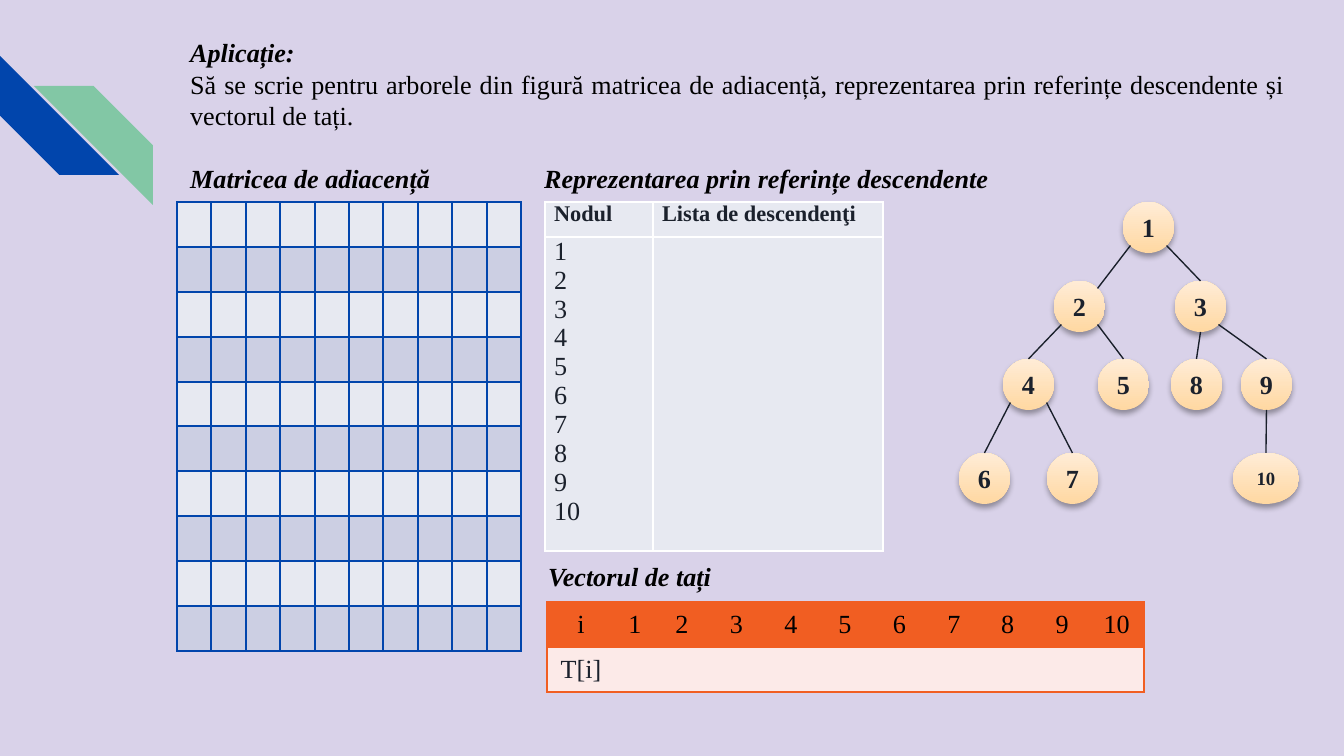
from dataclasses import dataclass
from math import sqrt

from lxml import etree
from pptx import Presentation
from pptx import util as u
from pptx.dml.color import RGBColor
from pptx.enum import shapes, text
from pptx.oxml.ns import qn

SCALE = 914400 / 134.4
FONT = "Times New Roman"
HEX = {
    "back": "D9D2E9", "blue": "0145AC", "green": "82C7A5", "black": "000000",
    "ink": "1B212C", "edge": "1A202B", "sand": "FFD8A2", "cream": "FFECD6",
    "pale": "E7E9F1", "band": "CCCFE3", "white": "FFFFFF",
    "orange": "F15E22", "rose": "FCEAE8",
}
ALIGN = text.PP_ALIGN
ANCHOR = text.MSO_ANCHOR


@dataclass
class Node:
    name: str
    x: int
    y: int
    w: int = 51
    size: int = 14
    h: int = 51


@dataclass
class Edge:
    top: str
    low: str
    start: str
    end: str = "n"


@dataclass
class Cell:
    fill: str
    lines: tuple[str, ...] = ()
    color: str = "ink"
    size: int = 14
    bold: bool = False


@dataclass
class Grid:
    x: int
    y: int
    cols: list[int]
    rows: list[int]
    cells: list[list[Cell]]
    line: str
    pad: int
    align: ALIGN = ALIGN.JUSTIFY
    anchor: ANCHOR = ANCHOR.TOP
    inner: bool = True


NODES = [
    Node("1", 1123, 202), Node("2", 1054, 281), Node("4", 1003, 359),
    Node("5", 1098, 359), Node("3", 1175, 281), Node("6", 959, 453),
    Node("7", 1047, 453), Node("8", 1171, 359), Node("9", 1241, 359),
    Node("10", 1233, 453, 66, 10),
]
EDGES = [
    Edge("1", "2", "sw", "ne"), Edge("1", "3", "se"), Edge("2", "4", "sw"),
    Edge("4", "6", "sw"), Edge("2", "5", "se"), Edge("4", "7", "se"),
    Edge("3", "8", "s"), Edge("3", "9", "se"), Edge("9", "10", "s"),
]
DIAG = sqrt(0.5)
SITES = {"n": (0, -1), "s": (0, 1), "ne": (DIAG, -DIAG),
         "sw": (-DIAG, DIAG), "se": (DIAG, DIAG)}


def px(n: float) -> u.Emu:
    return u.Emu(round(n * SCALE))


def rgb(name: str) -> RGBColor:
    return RGBColor.from_string(HEX[name])


def split(total: int, count: int) -> list[int]:
    """Cut a length into near-equal whole parts."""
    cuts = [round(total * i / count) for i in range(count + 1)]
    return [b - a for a, b in zip(cuts, cuts[1:])]


def add_run(para, words: str, size: int = 14, color: str = "black",
            bold: bool = False, slant: bool = False) -> None:
    run = para.add_run()
    run.text = words
    font = run.font
    font.name, font.size, font.bold, font.italic = FONT, u.Pt(size), bold, slant
    font.color.rgb = rgb(color)


def add_box(slide, x: int, y: int, w: int, h: int):
    frame = slide.shapes.add_textbox(px(x), px(y), px(w), px(h)).text_frame
    frame.word_wrap = True
    return frame


def add_stripe(slide, x: int, y: int, color: str, turn: int, flip: bool) -> None:
    shape = slide.shapes.add_shape(
        shapes.MSO_SHAPE.DIAGONAL_STRIPE, px(x), px(y), px(119), px(119))
    shape.rotation = turn
    shape.shadow.inherit = False
    shape.fill.solid()
    shape.fill.fore_color.rgb = rgb(color)
    shape.line.fill.background()
    if flip:
        shape._element.spPr.find(qn("a:xfrm")).set("flipH", "1")


def add_node(slide, node: Node) -> None:
    shape = slide.shapes.add_shape(
        shapes.MSO_SHAPE.OVAL, px(node.x), px(node.y), px(node.w), px(node.h))
    shape.line.fill.background()
    shape.fill.gradient()
    shape.fill.gradient_angle = 90
    for stop, color in zip(shape.fill.gradient_stops, ("sand", "cream")):
        stop.color.rgb = rgb(color)
    shape.shadow.inherit = False
    glow = etree.SubElement(
        shape._element.spPr.find(qn("a:effectLst")), qn("a:outerShdw"),
        blurRad="40000", dist="23000", dir="5400000", rotWithShape="0")
    tint = etree.SubElement(glow, qn("a:srgbClr"), val=HEX["black"])
    etree.SubElement(tint, qn("a:alpha"), val="35000")
    frame = shape.text_frame
    frame.margin_left = frame.margin_right = 0
    frame.margin_top = frame.margin_bottom = 0
    frame.vertical_anchor = ANCHOR.MIDDLE
    para = frame.paragraphs[0]
    para.alignment = ALIGN.CENTER
    add_run(para, node.name, node.size, "ink", bold=True)


def site(node: Node, name: str) -> tuple[u.Emu, u.Emu]:
    """Point on the rim of a node in the named direction."""
    dx, dy = SITES[name]
    return (px(node.x + node.w / 2 * (1 + dx)),
            px(node.y + node.h / 2 * (1 + dy)))


def add_edge(slide, edge: Edge, nodes: dict[str, Node]) -> None:
    line = slide.shapes.add_connector(
        shapes.MSO_CONNECTOR.STRAIGHT, *site(nodes[edge.top], edge.start),
        *site(nodes[edge.low], edge.end))
    line.line.color.rgb = rgb("edge")
    line.line.width = u.Pt(0.75)
    etree.SubElement(line._element.spPr, qn("a:effectLst"))


def set_sides(cell, color: str, sides: str) -> None:
    """Draw the named cell sides and clear the others."""
    props = cell._tc.get_or_add_tcPr()
    for i, side in enumerate("LRTB"):
        line = etree.Element(qn(f"a:ln{side}"), w="12700")
        if side in sides:
            fill = etree.SubElement(line, qn("a:solidFill"))
            etree.SubElement(fill, qn("a:srgbClr"), val=HEX[color])
        else:
            etree.SubElement(line, qn("a:noFill"))
        props.insert(i, line)


def add_grid(slide, grid: Grid) -> None:
    table = slide.shapes.add_table(
        len(grid.rows), len(grid.cols), px(grid.x), px(grid.y),
        px(sum(grid.cols)), px(sum(grid.rows))).table
    table.first_row = table.horz_banding = False
    for col, w in zip(table.columns, grid.cols):
        col.width = px(w)
    for row, h in zip(table.rows, grid.rows):
        row.height = px(h)
    last = len(grid.cols) - 1
    for r, row in enumerate(grid.cells):
        for c, item in enumerate(row):
            cell = table.cell(r, c)
            cell.margin_left = cell.margin_right = px(grid.pad)
            cell.margin_top = cell.margin_bottom = 0
            cell.vertical_anchor = grid.anchor
            cell.fill.solid()
            cell.fill.fore_color.rgb = rgb(item.fill)
            left = "L" if grid.inner or c == 0 else ""
            right = "R" if grid.inner or c == last else ""
            set_sides(cell, grid.line, "TB" + left + right)
            frame = cell.text_frame
            for i, words in enumerate(item.lines):
                para = frame.add_paragraph() if i else frame.paragraphs[0]
                para.alignment = grid.align
                add_run(para, words, item.size, item.color, item.bold)


def add_intro(slide) -> None:
    frame = add_box(slide, 177, 30, 1122, 172)
    lines = [
        ("Aplicație:", True),
        ("Să se scrie pentru arborele din figură matricea de adiacență, "
         "reprezentarea prin referințe descendente și vectorul de tați.", False),
        ("Matricea de adiacență\tReprezentarea prin referințe descendente", True),
    ]
    for i, (words, strong) in enumerate(lines):
        para = frame.add_paragraph() if i else frame.paragraphs[0]
        para.alignment = ALIGN.JUSTIFY
        add_run(para, words, bold=strong, slant=strong)
    para.space_before = u.Pt(17)
    tabs = etree.SubElement(para._p.get_or_add_pPr(), qn("a:tabLst"))
    etree.SubElement(tabs, qn("a:tab"), pos=str(px(354)), algn="l")


def main() -> None:
    deck = Presentation()
    deck.slide_width, deck.slide_height = px(1344), px(756)
    slide = deck.slides.add_slide(deck.slide_layouts[6])
    slide.background.fill.solid()
    slide.background.fill.fore_color.rgb = rgb("back")
    add_stripe(slide, 0, 56, "blue", 270, False)
    add_stripe(slide, 34, 86, "green", 0, True)
    add_intro(slide)

    nums = tuple(str(n) for n in range(1, 11))
    matrix = [[Cell("band" if r % 2 else "pale")] * 10 for r in range(10)]
    heads = [Cell("pale", (name,), size=12, bold=True)
             for name in ("Nodul", "Lista de descendenţi")]
    index = [Cell("orange", (name,), "black") for name in ("i", *nums)]
    values = [Cell("rose", ("T[i]",)), *[Cell("rose")] * 10]
    for grid in (
        Grid(547, 602, [68, 40, *split(489, 9)], [45, 45], [index, values],
             "orange", 5, ALIGN.CENTER, ANCHOR.MIDDLE, inner=False),
        Grid(177, 202, split(344, 10), split(449, 10), matrix, "blue", 0),
        Grid(545, 202, [108, 230], [35, 314],
             [heads, [Cell("pale", nums), Cell("pale")]], "white", 9),
    ):
        add_grid(slide, grid)

    for node in NODES:
        add_node(slide, node)
    named = {node.name: node for node in NODES}
    for edge in EDGES:
        add_edge(slide, edge, named)
    title = add_box(slide, 535, 554, 364, 46).paragraphs[0]
    add_run(title, "Vectorul de tați", bold=True, slant=True)
    deck.save("out.pptx")


if __name__ == "__main__":
    main()
